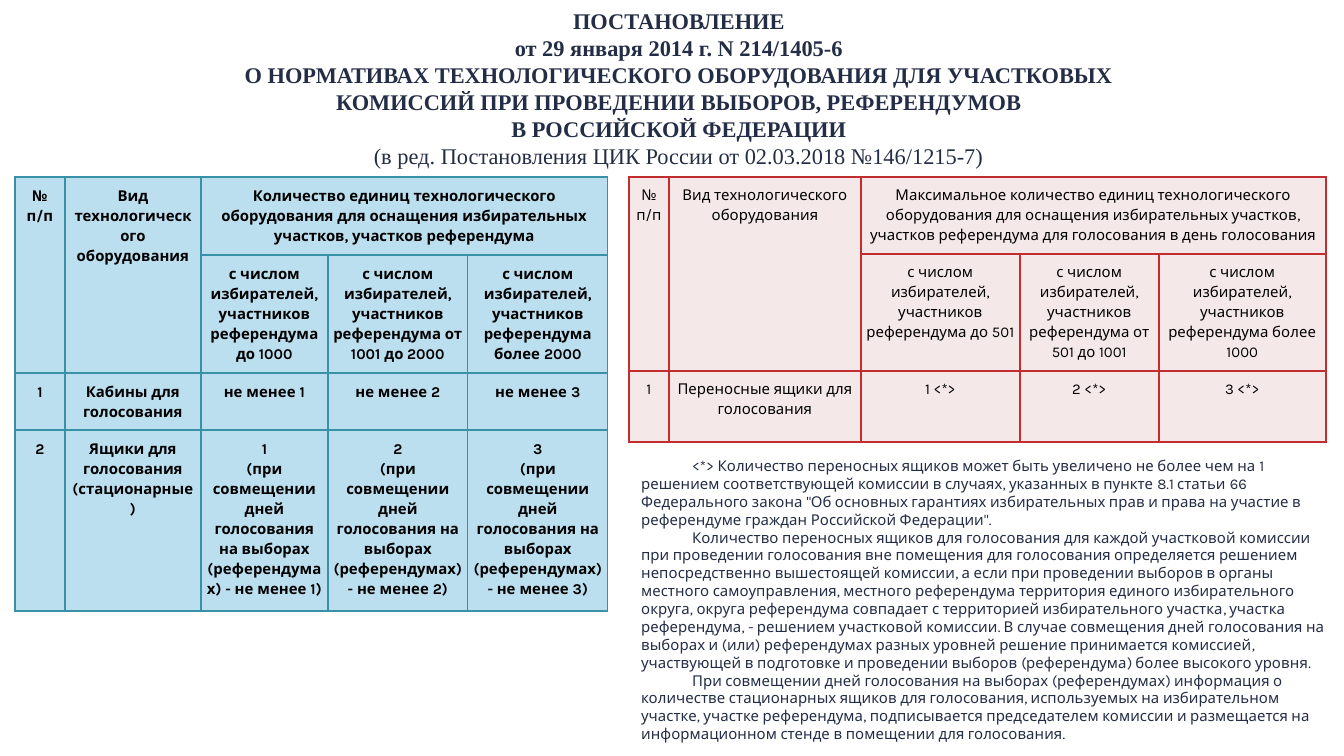
from lxml import etree
from pptx import Presentation
from pptx import util as u
from pptx.dml.color import RGBColor
from pptx.enum import text
from pptx.oxml.ns import qn

PX = 914400 / 134.4
BLACK = RGBColor(0x00, 0x00, 0x00)
NAVY = RGBColor(0x24, 0x2D, 0x46)
BLUE = RGBColor(0xBB, 0xDF, 0xEF)
TEAL = RGBColor(0x38, 0x91, 0xA7)
PINK = RGBColor(0xF5, 0xE8, 0xE8)
RED = RGBColor(0xC3, 0x2D, 0x2E)

TITLE = [
    "ПОСТАНОВЛЕНИЕ",
    "от 29 января 2014 г. N 214/1405-6",
    "О НОРМАТИВАХ ТЕХНОЛОГИЧЕСКОГО ОБОРУДОВАНИЯ ДЛЯ УЧАСТКОВЫХ",
    "КОМИССИЙ ПРИ ПРОВЕДЕНИИ ВЫБОРОВ, РЕФЕРЕНДУМОВ",
    "В РОССИЙСКОЙ ФЕДЕРАЦИИ",
    "(в ред. Постановления ЦИК России от 02.03.2018 №146/1215-7)",
]
NUMBER, KIND = "№ п/п", "Вид технологического оборудования"
VOTERS = "с числом избирателей, участников референдума "
COMBINED = "{0}\n(при совмещении дней голосования на выборах (референдумах) - не менее {0})"
TABLES = [
    dict(
        left=15, cols=[50, 136, 127, 140, 140], rows=[78, 118, 57, 181],
        margins=(5, 8), fill=BLUE, line=TEAL, width=0.75, bold=True,
        cells=[
            [NUMBER, KIND, "Количество единиц технологического оборудования для оснащения "
             "избирательных участков, участков референдума", "", ""],
            ["", ""] + [VOTERS + s for s in ("до 1000", "от 1001 до 2000", "более 2000")],
            ["1", "Кабины для голосования"] + [f"не менее {n}" for n in (1, 2, 3)],
            ["2", "Ящики для голосования (стационарные)"]
            + [COMBINED.format(n) for n in (1, 2, 3)],
        ],
    ),
    dict(
        left=629, cols=[40, 192, 159, 139, 167], rows=[77, 117, 71],
        margins=(4, 7), fill=PINK, line=RED, width=1, bold=False,
        cells=[
            [NUMBER, KIND, "Максимальное количество единиц технологического оборудования для "
             "оснащения избирательных участков, участков референдума для голосования "
             "в день голосования", "", ""],
            ["", ""] + [VOTERS + s for s in ("до 501", "от 501 до 1001", "более 1000")],
            ["1", "Переносные ящики для голосования"] + [f"{n} <*>" for n in (1, 2, 3)],
        ],
    ),
]
NOTES = [
    "<*> Количество переносных ящиков может быть увеличено не более чем на 1 решением "
    "соответствующей комиссии в случаях, указанных в пункте 8.1 статьи 66 Федерального закона "
    "\"Об основных гарантиях избирательных прав и права на участие в референдуме граждан "
    "Российской Федерации\".",
    "Количество переносных ящиков для голосования для каждой участковой комиссии при проведении "
    "голосования вне помещения для голосования определяется решением непосредственно вышестоящей "
    "комиссии, а если при проведении выборов в органы местного самоуправления, местного "
    "референдума территория единого избирательного округа, округа референдума совпадает с "
    "территорией избирательного участка, участка референдума, - решением участковой комиссии. "
    "В случае совмещения дней голосования на выборах и (или) референдумах разных уровней решение "
    "принимается комиссией, участвующей в подготовке и проведении выборов (референдума) более "
    "высокого уровня.",
    "При совмещении дней голосования на выборах (референдумах) информация о количестве "
    "стационарных ящиков для голосования, используемых на избирательном участке, участке "
    "референдума, подписывается председателем комиссии и размещается на информационном стенде "
    "в помещении для голосования.",
]


def px(n):
    return u.Emu(round(n * PX))


def style(p, font, size, color, bold=False):
    for r in p.runs:
        r.font.name = font
        r.font.size = u.Pt(size)
        r.font.color.rgb = color
        r.font.bold = bold


def add_text(s, box, lines, anchor):
    tf = s.shapes.add_textbox(*map(px, box)).text_frame
    tf.word_wrap = True
    tf.vertical_anchor = anchor
    tf.text = "\n".join(lines)
    return tf.paragraphs


def add_borders(cell, color, width):
    tcPr = cell._tc.get_or_add_tcPr()
    for side in ("lnL", "lnR", "lnT", "lnB"):
        ln = etree.SubElement(tcPr, qn(f"a:{side}"), w=str(u.Pt(width)))
        fill = etree.SubElement(ln, qn("a:solidFill"))
        etree.SubElement(fill, qn("a:srgbClr"), val=str(color))


def add_table(s, t):
    cols, rows = t["cols"], t["rows"]
    box = map(px, (t["left"], 177, sum(cols), sum(rows)))
    table = s.shapes.add_table(len(rows), len(cols), *box).table
    for col, width in zip(table.columns, cols):
        col.width = px(width)
    for row, height in zip(table.rows, rows):
        row.height = px(height)
    side, top = map(px, t["margins"])
    for row, values in zip(table.rows, t["cells"]):
        for cell, value in zip(row.cells, values):
            cell.margin_left = cell.margin_right = side
            cell.margin_top = cell.margin_bottom = top
            add_borders(cell, t["line"], t["width"])
            cell.fill.solid()
            cell.fill.fore_color.rgb = t["fill"]
            cell.text_frame.text = value
            for p in cell.text_frame.paragraphs:
                p.alignment = text.PP_ALIGN.CENTER
                p.line_spacing = 1.15
                style(p, "Karla", 8, BLACK, t["bold"])
    for start, end in (((0, 0), (1, 0)), ((0, 1), (1, 1)), ((0, 2), (0, 4))):
        table.cell(*start).merge(table.cell(*end))


def main():
    prs = Presentation()
    prs.slide_width, prs.slide_height = px(1344), px(756)
    s = prs.slides.add_slide(prs.slide_layouts[6])
    for t in TABLES:
        add_table(s, t)
    for i, p in enumerate(add_text(s, (15, 0, 1328, 176), TITLE, text.MSO_ANCHOR.MIDDLE)):
        p.alignment = text.PP_ALIGN.CENTER
        style(p, "Times New Roman", 12, NAVY, i < len(TITLE) - 1)
    for p in add_text(s, (628, 450, 712, 306), NOTES, text.MSO_ANCHOR.TOP):
        pPr = p._p.get_or_add_pPr()
        pPr.set("marL", "0")
        pPr.set("indent", str(px(51)))
        style(p, "Karla", 8, NAVY)
    prs.save("out.pptx")


if __name__ == "__main__":
    main()
